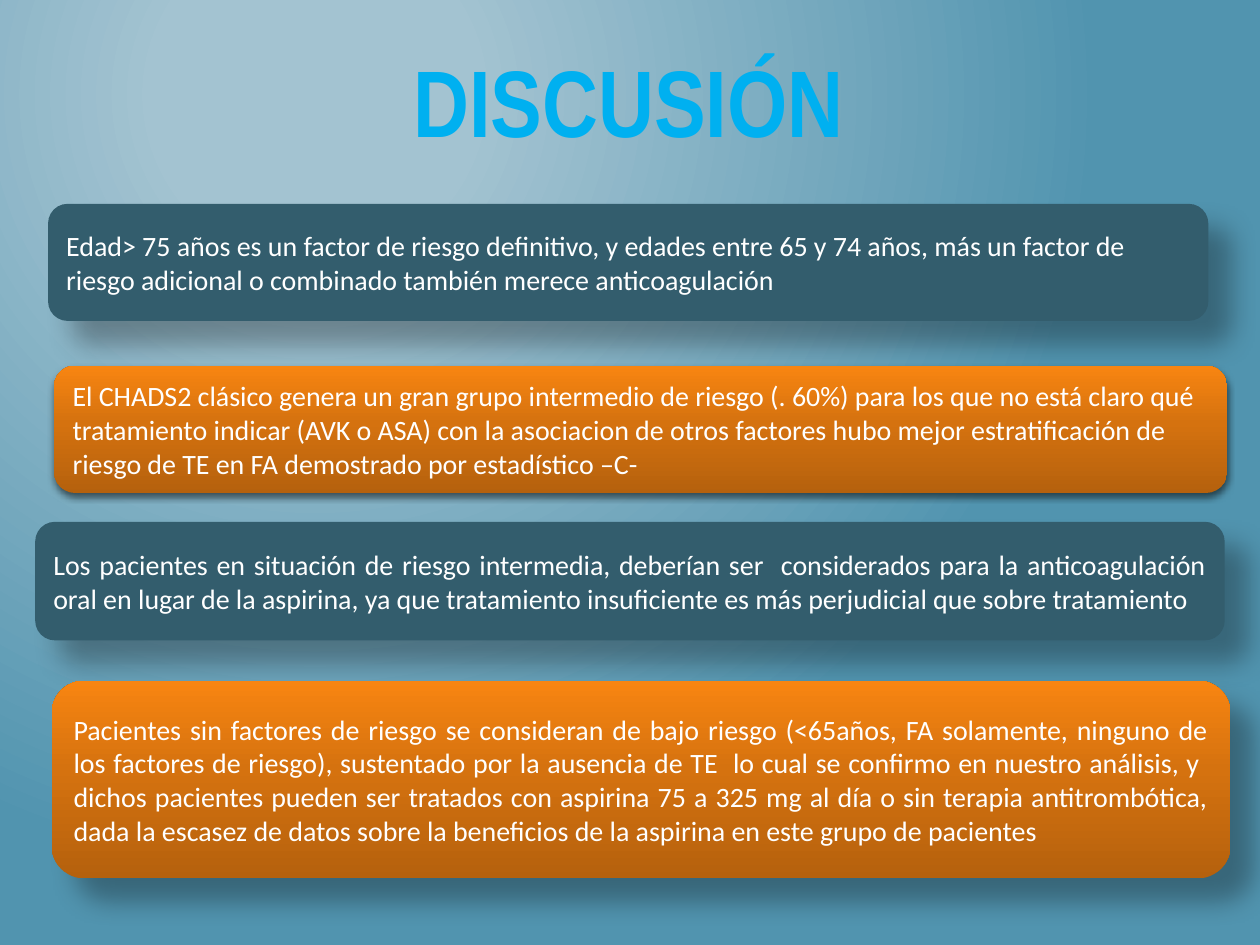
"""Build the discussion slide: a title over four rounded statement panels."""
from lxml.etree import SubElement
from pptx import Presentation
from pptx.dml.color import RGBColor
from pptx.enum.shapes import MSO_SHAPE as Shape
from pptx.enum.text import MSO_ANCHOR as Anchor, PP_ALIGN as Align
from pptx.oxml.ns import qn
from pptx.util import Cm, Pt

COLORS = {
    "title": "00B0F0", "text": "FFFFFF", "teal": "335D6D", "shadow": "000000",
    "orange_dark": "B5610D", "orange_mid": "D5720F", "orange_light": "F88511",
    "sky_light": "A3C3D1", "sky_dark": "5194AF",
}
SKY = [(20, "sky_light"), (100, "sky_dark")]
ORANGE = [(0, "orange_dark"), (55, "orange_mid"), (100, "orange_light")]
DEEP = {"alpha": 30, "blur": 15, "dist": 18, "angle": 45}
SOFT = {"alpha": 55, "blur": 4, "dist": 2, "angle": 90}

TITLE = ("DISCUSIÓN", (4.47, 0.71, 16.41, 2.59))
PANELS = [
    ("Edad> 75 años es un factor de riesgo definitivo, y edades entre 65 y 74 años, "
     "más un factor de riesgo adicional o combinado también merece anticoagulación",
     (0.97, 4.11, 23.39, 2.36), None, DEEP, Align.LEFT),
    ("El CHADS2 clásico genera un gran grupo intermedio de riesgo (. 60%) para los que "
     "no está claro qué tratamiento indicar (AVK o ASA) con la asociacion de otros "
     "factores hubo mejor estratificación de riesgo de TE en FA demostrado por "
     "estadístico –C-",
     (1.09, 7.37, 23.65, 2.57), ORANGE, SOFT, Align.LEFT),
    ("Los pacientes en situación de riesgo intermedia, deberían ser  considerados para "
     "la anticoagulación oral en lugar de la aspirina, ya que tratamiento insuficiente "
     "es más perjudicial que sobre tratamiento",
     (0.71, 10.52, 23.98, 2.39), None, DEEP, Align.JUSTIFY),
    ("Pacientes sin factores de riesgo se consideran de bajo riesgo (<65años, FA "
     "solamente, ninguno de los factores de riesgo), sustentado por la ausencia de TE  "
     "lo cual se confirmo en nuestro análisis, y  dichos pacientes pueden ser tratados "
     "con aspirina 75 a 325 mg al día o sin terapia antitrombótica, dada la escasez de "
     "datos sobre la beneficios de la aspirina en este grupo de pacientes",
     (1.04, 13.72, 23.77, 3.99), ORANGE, DEEP, Align.JUSTIFY),
]


def add_node(parent, tag, **attributes):
    return SubElement(parent, qn(tag), {key: str(value) for key, value in attributes.items()})


def set_gradient(properties, stops):
    """Swap the gradient of a properties element for the given stops."""
    gradient = properties.find(qn("a:gradFill"))
    for child in list(gradient):
        gradient.remove(child)
    stop_list = add_node(gradient, "a:gsLst")
    for position, color in stops:
        stop = add_node(stop_list, "a:gs", pos=position * 1000)
        add_node(stop, "a:srgbClr", val=COLORS[color])
    return gradient


def set_shadow(shape, alpha, blur, dist, angle):
    shape.shadow.inherit = False
    effects = shape._element.spPr.find(qn("a:effectLst"))
    shadow = add_node(effects, "a:outerShdw", blurRad=Pt(blur), dist=Pt(dist),
                      dir=angle * 60000, algn="ctr", rotWithShape=0)
    color = add_node(shadow, "a:srgbClr", val=COLORS["shadow"])
    add_node(color, "a:alpha", val=alpha * 1000)


def write(shape, text, align, font, size, color, bold=False):
    frame = shape.text_frame
    frame.word_wrap = True
    frame.vertical_anchor = Anchor.MIDDLE
    para = frame.paragraphs[0]
    para.alignment = align
    span = para.add_run()
    span.text = text
    span.font.name, span.font.size, span.font.bold = font, Pt(size), bold
    span.font.color.rgb = RGBColor.from_string(COLORS[color])


def add_panel(page, text, place, stops, shadow, align):
    panel = page.shapes.add_shape(Shape.ROUNDED_RECTANGLE, *map(Cm, place))
    if stops:
        panel.fill.gradient()
        gradient = set_gradient(panel._element.spPr, stops)
        add_node(gradient, "a:lin", ang=270 * 60000, scaled=0)
    else:
        panel.fill.solid()
        panel.fill.fore_color.rgb = RGBColor.from_string(COLORS["teal"])
    panel.line.fill.background()
    set_shadow(panel, **shadow)
    write(panel, text, align, "Calibri", 16, "text")


def paint_background(page):
    page.background.fill.gradient()
    gradient = set_gradient(page._element.cSld.bg.bgPr, SKY)
    circle = add_node(gradient, "a:path", path="circle")
    add_node(circle, "a:fillToRect", l=50000, t=20000, r=100000, b=100000)


def main():
    deck = Presentation()
    deck.slide_width, deck.slide_height = Cm(25.4), Cm(19.05)
    page = deck.slides.add_slide(deck.slide_layouts[6])
    paint_background(page)
    for panel in PANELS:
        add_panel(page, *panel)
    text, place = TITLE
    box = page.shapes.add_textbox(*map(Cm, place))
    write(box, text, Align.CENTER, "Arial Narrow", 54, "title", bold=True)
    deck.save("out.pptx")


if __name__ == "__main__":
    main()
